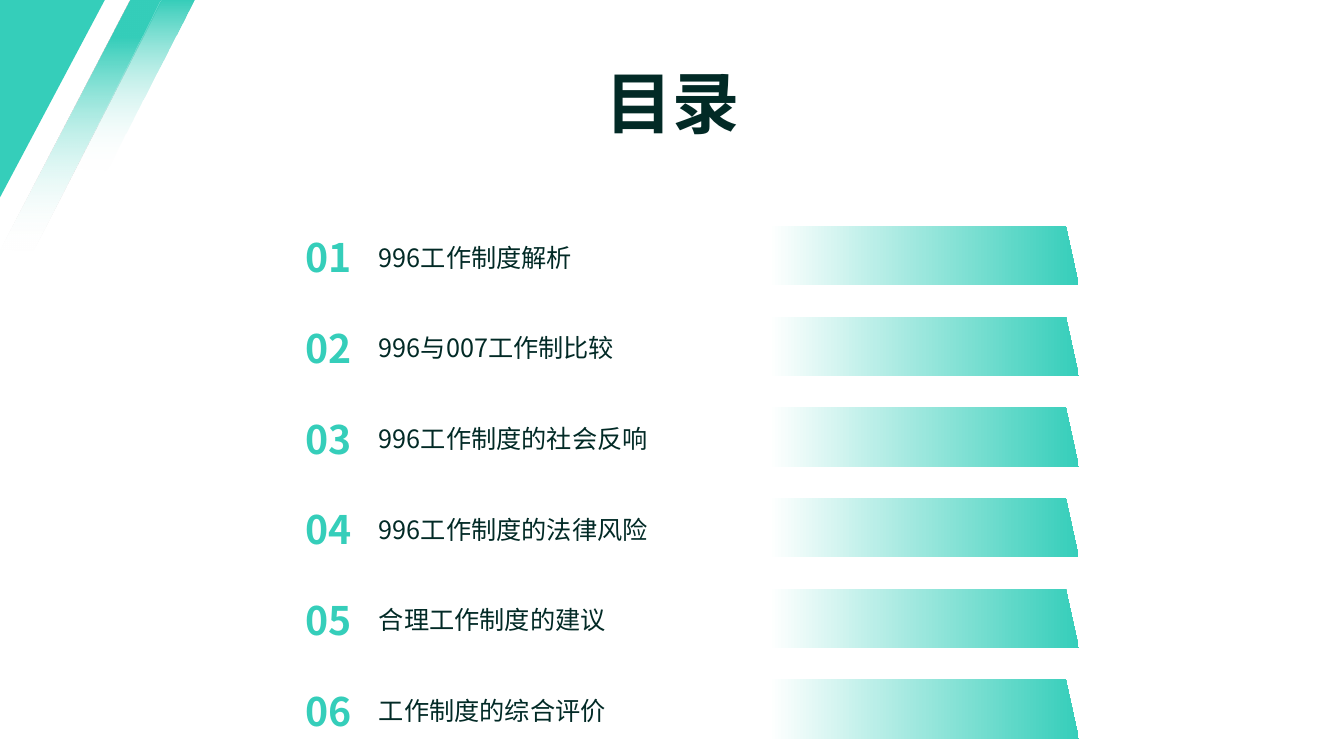
from dataclasses import dataclass

from lxml.etree import SubElement
from pptx import Presentation
from pptx.dml.color import RGBColor
from pptx.enum.shapes import MSO_SHAPE
from pptx.enum.text import MSO_ANCHOR, PP_ALIGN
from pptx.oxml.ns import qn
from pptx.shapes.autoshape import Shape
from pptx.shapes.shapetree import GroupShapes, SlideShapes
from pptx.text.text import TextFrame
from pptx.util import Inches, Pt

FONT = "Noto Sans CJK SC"
TEAL, DARK, WHITE = "35CEBA", "022A26", "FFFFFF"
FIRST_ROW_TOP, ROW_STEP = 2.2, 0.9


@dataclass(frozen=True)
class Stop:
    position: int
    color: str
    alpha: int = 100


@dataclass(frozen=True)
class Stripe:
    points: tuple[tuple[float, float], ...]
    solid_until: int


STRIPES = (
    Stripe(((0.33, 2.48), (0, 2.47), (1.29, 0), (1.61, 0)), 15),
    Stripe(((1.6, 0), (1.93, 0), (1.06, 1.69), (0.75, 1.67)), 0),
)
ENTRIES = (
    "996工作制度解析",
    "996与007工作制比较",
    "996工作制度的社会反响",
    "996工作制度的法律风险",
    "合理工作制度的建议",
    "工作制度的综合评价",
)


def rgb(color: str) -> RGBColor:
    return RGBColor.from_string(color)


def fill_solid(shape: Shape, color: str) -> None:
    shape.fill.solid()
    shape.fill.fore_color.rgb = rgb(color)


def fill_gradient(shape: Shape, stops: tuple[Stop, ...], angle: int) -> None:
    """Apply a linear gradient; the angle runs clockwise in degrees."""
    shape.fill.gradient()
    gradient = shape.element.spPr.find(qn("a:gradFill"))
    gradient.clear()
    gradient.set("rotWithShape", "1")
    stop_list = SubElement(gradient, qn("a:gsLst"))
    for stop in stops:
        node = SubElement(stop_list, qn("a:gs"), pos=str(stop.position * 1000))
        color = SubElement(node, qn("a:srgbClr"), val=stop.color)
        if stop.alpha < 100:
            SubElement(color, qn("a:alpha"), val=str(stop.alpha * 1000))
    SubElement(gradient, qn("a:lin"), ang=str(angle * 60000), scaled="0")


def remove_outline(shape: Shape) -> None:
    shape.shadow.inherit = False
    shape.line.fill.background()


def flip(shape: Shape, direction: str) -> None:
    shape.element.spPr.find(qn("a:xfrm")).set(direction, "1")


def write(frame: TextFrame, text: str, size: int, color: str, bold: bool) -> None:
    frame.word_wrap = True
    paragraph = frame.paragraphs[0]
    paragraph.text = text
    font = paragraph.font
    font.name, font.size, font.bold = FONT, Pt(size), bold
    font.color.rgb = rgb(color)
    properties = paragraph._p.pPr.find(qn("a:defRPr"))
    SubElement(properties, qn("a:ea"), typeface=FONT)


def add_label(shapes: GroupShapes, box: tuple[float, float, float, float],
              text: str, size: int, color: str, bold: bool) -> None:
    frame = shapes.add_textbox(*map(Inches, box)).text_frame
    frame.vertical_anchor = MSO_ANCHOR.MIDDLE
    write(frame, text, size, color, bold)


def add_stripe(shapes: SlideShapes, stripe: Stripe) -> None:
    start, *others = [(Inches(x), Inches(y)) for x, y in stripe.points]
    builder = shapes.build_freeform(*start)
    builder.add_line_segments(others)
    shape = builder.convert_to_shape()
    remove_outline(shape)
    fill_gradient(shape, (Stop(stripe.solid_until, TEAL), Stop(100, WHITE, 0)), 90)


def add_corner(shapes: SlideShapes) -> None:
    triangle = shapes.add_shape(MSO_SHAPE.RIGHT_TRIANGLE, 0, 0, Inches(1.04), Inches(1.96))
    flip(triangle, "flipV")
    remove_outline(triangle)
    fill_solid(triangle, TEAL)


def add_entry(shapes: SlideShapes, number: int, text: str) -> None:
    top = FIRST_ROW_TOP + (number - 1) * ROW_STEP
    row = shapes.add_group_shape().shapes
    bar = row.add_shape(MSO_SHAPE.PARALLELOGRAM, Inches(2.62), Inches(top + 0.04),
                        Inches(8.08), Inches(0.59))
    bar.adjustments[0] = 0.22
    flip(bar, "flipH")
    remove_outline(bar)
    fill_gradient(bar, (Stop(62, WHITE), Stop(100, TEAL)), 180)
    add_label(row, (3.66, top, 7.05, 0.7), text, 18, DARK, False)
    add_label(row, (2.93, top + 0.05, 0.69, 0.6), f"{number:02}", 28, TEAL, True)


def main() -> None:
    presentation = Presentation()
    presentation.slide_width, presentation.slide_height = Inches(13.33), Inches(7.5)
    slide = presentation.slides.add_slide(presentation.slide_layouts[5])

    # Corner decoration
    add_stripe(slide.shapes, STRIPES[0])
    add_corner(slide.shapes)
    add_stripe(slide.shapes, STRIPES[1])

    # Title
    title = slide.shapes.title
    title.left, title.top, title.width, title.height = map(Inches, (5.8, 0.56, 1.74, 1.01))
    title.text_frame.vertical_anchor = MSO_ANCHOR.TOP
    write(title.text_frame, "目录", 48, DARK, True)
    title.text_frame.paragraphs[0].alignment = PP_ALIGN.CENTER

    # Contents list
    for number, text in enumerate(ENTRIES, start=1):
        add_entry(slide.shapes, number, text)

    presentation.save("out.pptx")


if __name__ == "__main__":
    main()
